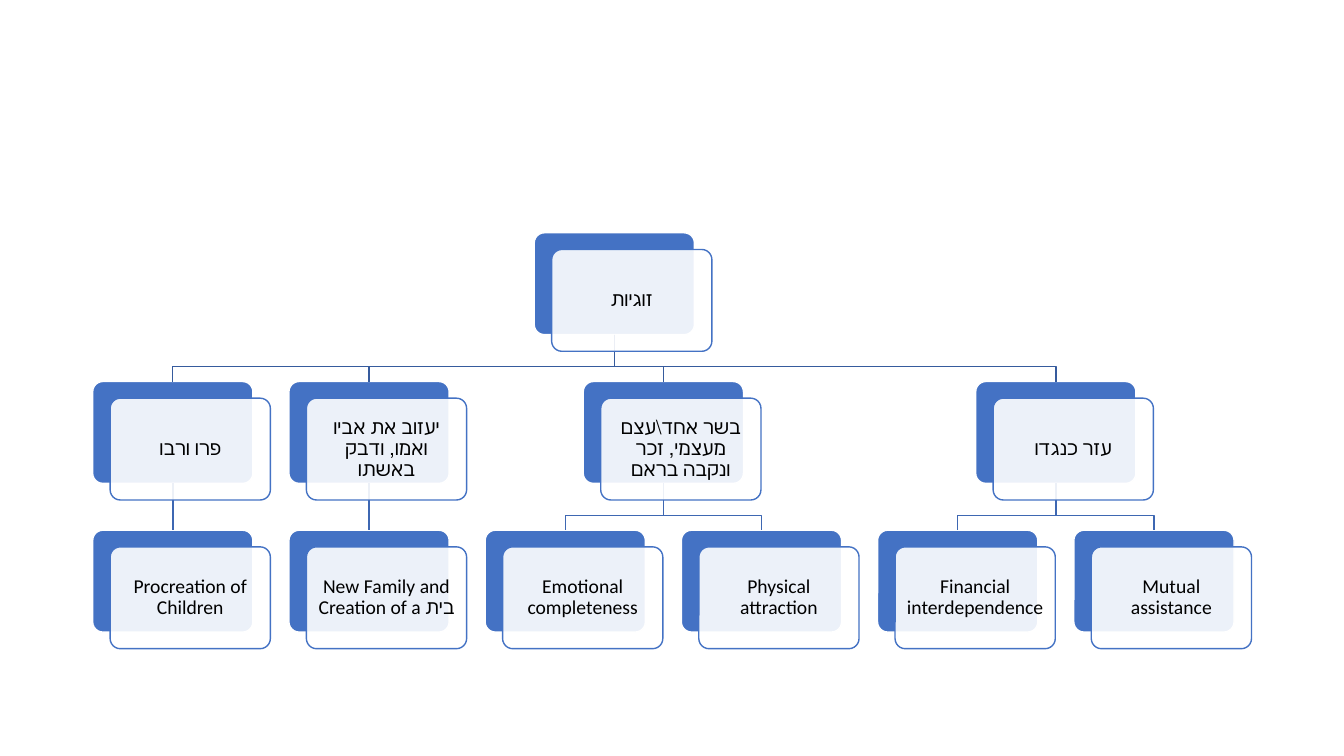
import pptx
import pptx.util
import pptx.dml.color
import pptx.enum.shapes
import pptx.enum.text
import pptx.oxml.ns
import lxml.etree

COLORS = {"blue": "4472C4", "white": "FFFFFF", "black": "000000",
          "upper_link": "365B9D", "lower_link": "3E67B2"}

LEFT, COL_STEP = 6.9, 14.6
TOP, ROW_STEP = 30.8, 19.67
CARD_W, CARD_H = 11.92, 13.47
SHIFT_X, SHIFT_Y = 1.3, 2.2
BEND = 0.68

NODES = {
    "root": (2.25, 0, "זוגיות", None),
    "multiply": (0, 1, "פרו ורבו", "root"),
    "leave": (1, 1, "יעזוב את אביו ואמו, ודבק באשתו", "root"),
    "flesh": (2.5, 1, "בשר אחד\\עצם מעצמי, זכר ונקבה בראם", "root"),
    "helper": (4.5, 1, "עזר כנגדו", "root"),
    "children": (0, 2, "Procreation of Children", "multiply"),
    "family": (1, 2, "New Family and Creation of a בית", "leave"),
    "emotional": (2, 2, "Emotional completeness", "flesh"),
    "physical": (3, 2, "Physical attraction", "flesh"),
    "financial": (4, 2, "Financial interdependence", "helper"),
    "mutual": (5, 2, "Mutual assistance", "helper"),
}


def rgb(name):
    return pptx.dml.color.RGBColor.from_string(COLORS[name])


def apply(target, values):
    for name, value in values.items():
        setattr(target, name, value)


class Chart:
    frame = {"word_wrap": True,
             "vertical_anchor": pptx.enum.text.MSO_ANCHOR.MIDDLE,
             **{f"margin_{side}": pptx.util.Inches(0.06)
                for side in ("left", "top", "right", "bottom")}}
    paragraph = {"alignment": pptx.enum.text.PP_ALIGN.CENTER, "line_spacing": 0.9}
    font = {"name": "Calibri", "size": pptx.util.Pt(14)}

    def __init__(self, prs):
        self.prs = prs
        self.s = prs.slides.add_slide(prs.slide_layouts[6])

    def x(self, columns):
        return round(self.prs.slide_width * columns / 100)

    def y(self, rows):
        return round(self.prs.slide_height * rows / 100)

    def outline(self, sp, color):
        sp.line.color.rgb = rgb(color)
        sp.line.width = pptx.util.Pt(1)

    def card(self, col, row, fill, line):
        sp = self.s.shapes.add_shape(
            pptx.enum.shapes.MSO_SHAPE.ROUNDED_RECTANGLE,
            self.x(col), self.y(row), self.x(CARD_W), self.y(CARD_H))
        sp.adjustments[0] = 0.1
        sp.shadow.inherit = False
        sp.fill.solid()
        sp.fill.fore_color.rgb = rgb(fill)
        self.outline(sp, line)
        return sp

    def label_card(self, col, row, text):
        sp = self.card(col, row, "white", "blue")
        color = sp.fill._xPr.find(".//" + pptx.oxml.ns.qn("a:srgbClr"))
        lxml.etree.SubElement(color, pptx.oxml.ns.qn("a:alpha"), val="90000")
        tf = sp.text_frame
        apply(tf, self.frame)
        p = tf.paragraphs[0]
        apply(p, self.paragraph)
        r = p.add_run()
        r.text = text
        apply(r.font, self.font)
        r.font.color.rgb = rgb("black")

    def straight_link(self, parent, child, color):
        link = self.s.shapes.add_connector(
            pptx.enum.shapes.MSO_CONNECTOR.STRAIGHT, 0, 0, 0, 0)
        link.begin_connect(parent, 2)
        link.end_connect(child, 0)
        self.outline(link, color)
        lxml.etree.SubElement(link._element.spPr, pptx.oxml.ns.qn("a:effectLst"))

    def bent_link(self, parent, child, color):
        x1, y1 = parent.left + parent.width // 2, parent.top + parent.height
        x2, y2 = child.left + child.width // 2, child.top
        bend = round(y1 + (y2 - y1) * BEND)
        path = self.s.shapes.build_freeform(x1, y1)
        path.add_line_segments([(x1, bend), (x2, bend), (x2, y2)], close=False)
        sp = path.convert_to_shape()
        sp.fill.background()
        sp.shadow.inherit = False
        self.outline(sp, color)


def main():
    prs = pptx.Presentation()
    prs.slide_width = pptx.util.Inches(13.33)
    prs.slide_height = pptx.util.Inches(7.5)
    chart = Chart(prs)
    places = {key: (LEFT + col * COL_STEP, TOP + level * ROW_STEP)
              for key, (col, level, text, parent) in NODES.items()}
    backs = {key: chart.card(*place, "blue", "white")
             for key, place in places.items()}
    for key, (col, level, text, parent) in NODES.items():
        if parent:
            link = chart.straight_link if col == NODES[parent][0] else chart.bent_link
            link(backs[parent], backs[key],
                 "upper_link" if level == 1 else "lower_link")
    for key, (col, row) in places.items():
        chart.label_card(col + SHIFT_X, row + SHIFT_Y, NODES[key][2])
    prs.save("out.pptx")


if __name__ == "__main__":
    main()
